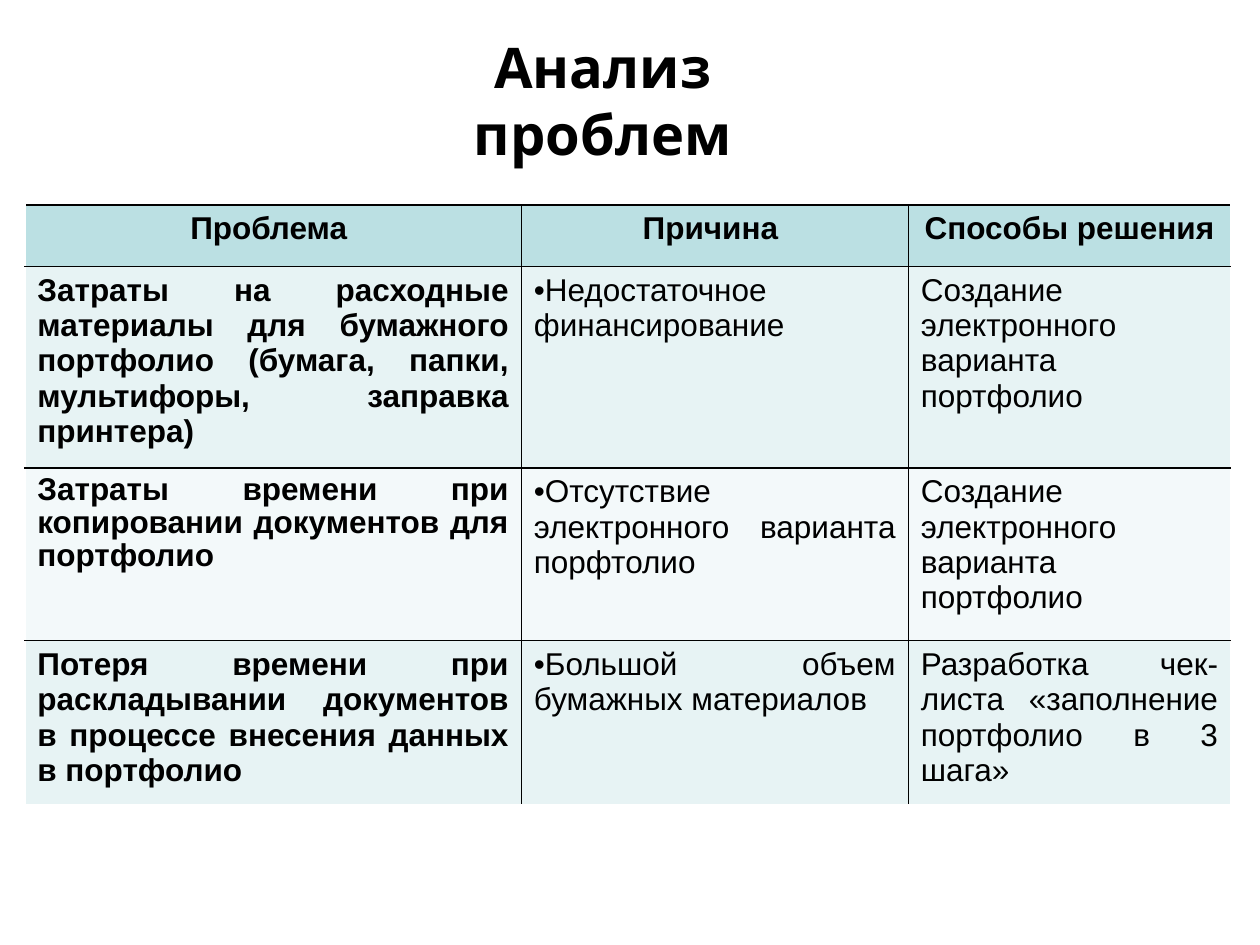
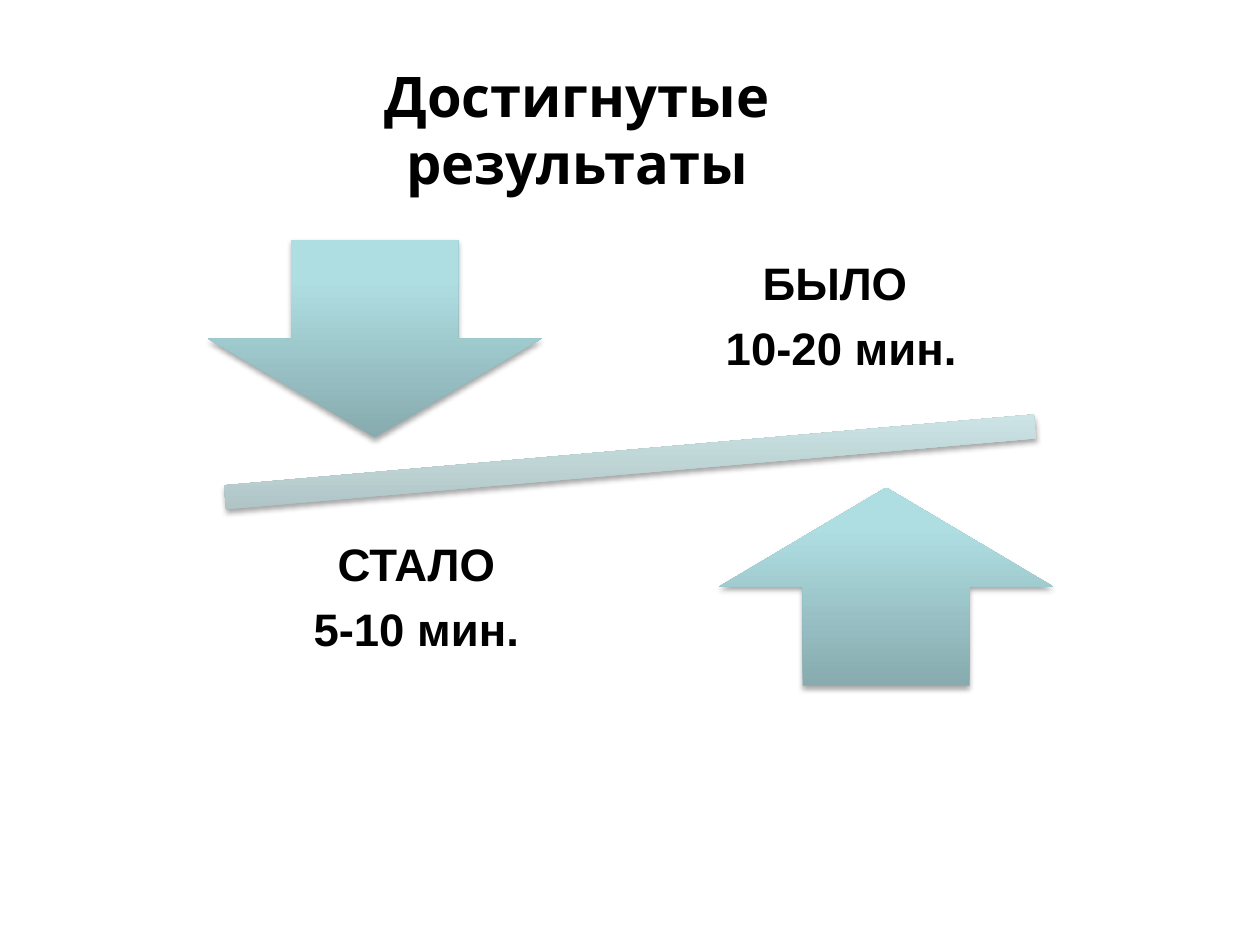
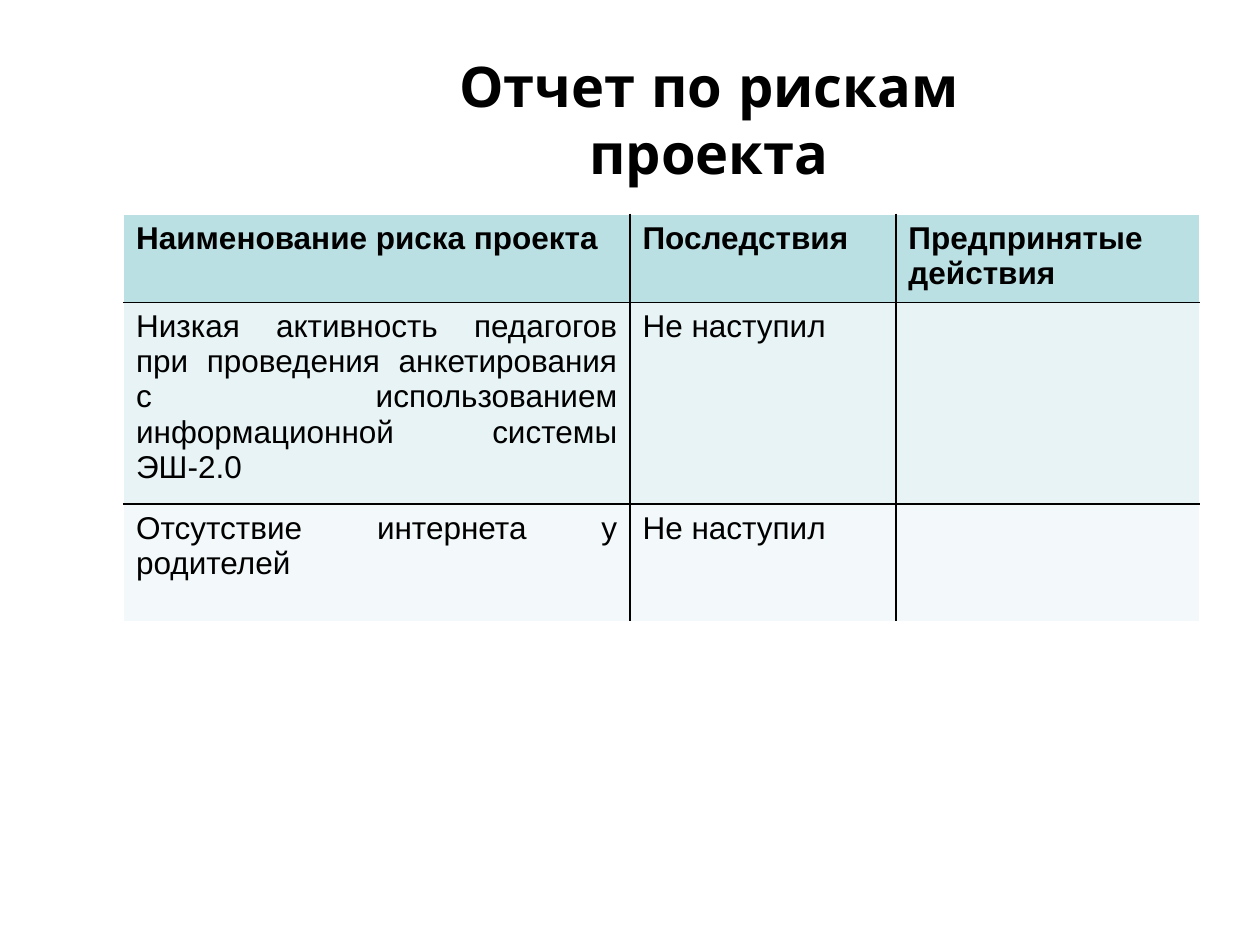
from lxml import etree
from pptx import Presentation
from pptx.dml.color import RGBColor
from pptx.enum import shapes, text
from pptx.oxml import parse_xml
from pptx.oxml.ns import nsdecls, qn
from pptx.util import Cm, Pt

# Shared style
BLACK = RGBColor(0x00, 0x00, 0x00)
WHITE = RGBColor(0xFF, 0xFF, 0xFF)
HEADER_FILL = RGBColor(0xBB, 0xE0, 0xE3)
BAND_FILLS = (RGBColor(0xE7, 0xF3, 0xF4), RGBColor(0xF3, 0xF9, 0xFA))
ARROW_GRADIENT = ((0, RGBColor(0x87, 0xAB, 0xAE)),
                  (80, RGBColor(0xAF, 0xDE, 0xE2)),
                  (100, RGBColor(0xAF, 0xE0, 0xE4)))
BEAM_GRADIENT = ((0, RGBColor(0xA0, 0xB3, 0xB4)),
                 (80, RGBColor(0xD0, 0xE8, 0xEA)),
                 (100, RGBColor(0xD0, 0xEA, 0xEC)))
TITLE_FONT, BODY_FONT = "Quicksand", "Arial"
LEFT, CENTER, JUSTIFY = (text.PP_ALIGN.LEFT, text.PP_ALIGN.CENTER,
                         text.PP_ALIGN.JUSTIFY)

# Content: positions and sizes in centimetres
PROBLEMS = {
    "title": ("Анализ проблем", 7.21, 0.53, 9.88),
    "at": (0.5, 4.13),
    "columns": (10.01, 7.8, 6.5),
    "rows": (1.24, 3.8, 3.48, 3.07),
    "header_align": CENTER,
    "top_border": BLACK,
    "bold_columns": (0,),
    "bullet_columns": (1,),
    "tight_cells": ((2, 0),),
    "cells": (
        ("Проблема ", "Причина ", "Способы решения"),
        ("Затраты на расходные материалы для бумажного портфолио "
         "(бумага, папки, мультифоры, заправка принтера)",
         "Недостаточное финансирование ",
         "Создание электронного варианта портфолио"),
        ("Затраты времени при копировании документов для портфолио",
         "Отсутствие электронного варианта порфтолио",
         "Создание электронного варианта портфолио"),
        ("Потеря времени при раскладывании документов в процессе "
         "внесения данных в портфолио",
         "Большой объем бумажных материалов",
         "Разработка чек-листа «заполнение портфолио в 3 шага»"),
    ),
}
RISKS = {
    "title": ("Отчет по рискам проекта", 6.96, 0.91, 14.66),
    "at": (2.49, 4.32),
    "columns": (10.21, 5.36, 6.12),
    "rows": (1.65, 3.8, 2.37),
    "header_align": LEFT,
    "top_border": WHITE,
    "bold_columns": (),
    "bullet_columns": (),
    "tight_cells": (),
    "cells": (
        ("Наименование риска проекта", "Последствия",
         "Предпринятые действия"),
        ("Низкая активность педагогов при проведения анкетирования "
         "с использованием информационной системы ЭШ-2.0",
         "Не наступил", ""),
        ("Отсутствие интернета у родителей", "Не наступил ", ""),
    ),
}
RESULTS_TITLE = ("Достигнутые результаты", 4.27, 1.12, 14.73)
BALANCE = (
    (shapes.MSO_SHAPE.MATH_MINUS, (1.55, 8.28, 22.3, 2.06), 355, BEAM_GRADIENT),
    (shapes.MSO_SHAPE.DOWN_ARROW, (4.19, 4.83, 6.73, 3.99), 0, ARROW_GRADIENT),
    (shapes.MSO_SHAPE.UP_ARROW, (14.5, 9.83, 6.73, 3.99), 0, ARROW_GRADIENT),
)
TIMES = (
    (("БЫЛО ", "10-20 мин."), (13.38, 4.32, 7.16, 4.19)),
    (("СТАЛО", "5-10 мин."), (4.13, 10.41, 8.53, 3.33)),
)


def set_font(paragraph, name, size, bold):
    font = paragraph.font
    font.name, font.size, font.bold = name, Pt(size), bold
    font.color.rgb = BLACK


def add_slide(presentation, title):
    words, left, top, width = title
    slide = presentation.slides.add_slide(presentation.slide_layouts[6])
    box = slide.shapes.add_textbox(Cm(left), Cm(top), Cm(width), Cm(1.63))
    frame = box.text_frame
    frame.word_wrap = True
    frame.auto_size = text.MSO_AUTO_SIZE.SHAPE_TO_FIT_TEXT
    paragraph = frame.paragraphs[0]
    paragraph.text = words
    paragraph.alignment = CENTER
    set_font(paragraph, TITLE_FONT, 32, True)
    return slide


def add_borders(cell, colors):
    properties = cell._tc.get_or_add_tcPr()
    for side, color in zip("LRTB", colors):
        properties.append(parse_xml(
            f'<a:ln{side} {nsdecls("a")} w="{Pt(1)}"><a:solidFill>'
            f'<a:srgbClr val="{color}"/></a:solidFill></a:ln{side}>'))


def add_bullet(paragraph):
    properties = paragraph._p.get_or_add_pPr()
    etree.SubElement(properties, qn("a:buFont")).set("typeface", BODY_FONT)
    etree.SubElement(properties, qn("a:buChar")).set("char", "•")


def add_table_slide(presentation, content):
    slide = add_slide(presentation, content["title"])
    columns, rows = content["columns"], content["rows"]
    left, top = content["at"]
    table = slide.shapes.add_table(
        len(rows), len(columns), Cm(left), Cm(top),
        Cm(sum(columns)), Cm(sum(rows))).table
    table.horz_banding = False
    for column, width in zip(table.columns, columns):
        column.width = Cm(width)
    for row, height in zip(table.rows, rows):
        row.height = Cm(height)

    for r, row_texts in enumerate(content["cells"]):
        for c, words in enumerate(row_texts):
            cell = table.cell(r, c)
            # Inner borders are black, outer ones white
            add_borders(cell, (
                BLACK if c else WHITE,
                BLACK if c < len(columns) - 1 else WHITE,
                BLACK if r else content["top_border"],
                BLACK if r < len(rows) - 1 else WHITE))
            cell.fill.solid()
            cell.fill.fore_color.rgb = BAND_FILLS[(r - 1) % 2] if r else HEADER_FILL
            paragraph = cell.text_frame.paragraphs[0]
            paragraph.text = words
            paragraph.alignment = JUSTIFY if r else content["header_align"]
            if (r, c) in content["tight_cells"]:
                paragraph.line_spacing = 0.93
            if r and c in content["bullet_columns"]:
                add_bullet(paragraph)
            set_font(paragraph, BODY_FONT, 18, r == 0 or c in content["bold_columns"])
            # Row heights are measured with the font of the runs
            for run in paragraph.runs:
                run.font.name = BODY_FONT


def add_gradient_shape(slide, kind, place, rotation, stops):
    shape = slide.shapes.add_shape(kind, *map(Cm, place))
    shape.rotation = rotation
    shape.line.fill.background()
    shape.shadow.inherit = False
    stop_xml = "".join(
        f'<a:gs pos="{position * 1000}"><a:srgbClr val="{color}"/></a:gs>'
        for position, color in stops)
    properties = shape._element.spPr
    properties.find(qn("a:ln")).addprevious(parse_xml(
        f'<a:gradFill {nsdecls("a")} rotWithShape="0"><a:gsLst>{stop_xml}'
        '</a:gsLst><a:lin ang="16200000" scaled="0"/></a:gradFill>'))
    properties.find(qn("a:effectLst")).append(parse_xml(
        f'<a:outerShdw {nsdecls("a")} blurRad="{Pt(3.1)}" dist="{Pt(1.8)}" '
        f'dir="5400000" rotWithShape="0"><a:srgbClr val="{BLACK}">'
        '<a:alpha val="35000"/></a:srgbClr></a:outerShdw>'))


def add_time(slide, lines, place):
    frame = slide.shapes.add_textbox(*map(Cm, place)).text_frame
    frame.word_wrap = True
    frame.vertical_anchor = text.MSO_ANCHOR.MIDDLE
    frame.margin_left = frame.margin_right = Cm(0.51)
    frame.margin_top = frame.margin_bottom = Cm(0.51)
    frame.text = "\n".join(lines)
    for paragraph in frame.paragraphs:
        paragraph.alignment = CENTER
        paragraph.line_spacing = 0.9
        paragraph.space_after = Pt(9)
        set_font(paragraph, BODY_FONT, 26, True)


def add_results_slide(presentation):
    slide = add_slide(presentation, RESULTS_TITLE)
    for part in BALANCE:
        add_gradient_shape(slide, *part)
    for lines, place in TIMES:
        add_time(slide, lines, place)


def main():
    presentation = Presentation()
    presentation.slide_width, presentation.slide_height = Cm(25.4), Cm(19.05)
    add_table_slide(presentation, PROBLEMS)
    add_results_slide(presentation)
    add_table_slide(presentation, RISKS)
    presentation.save("out.pptx")


if __name__ == "__main__":
    main()
